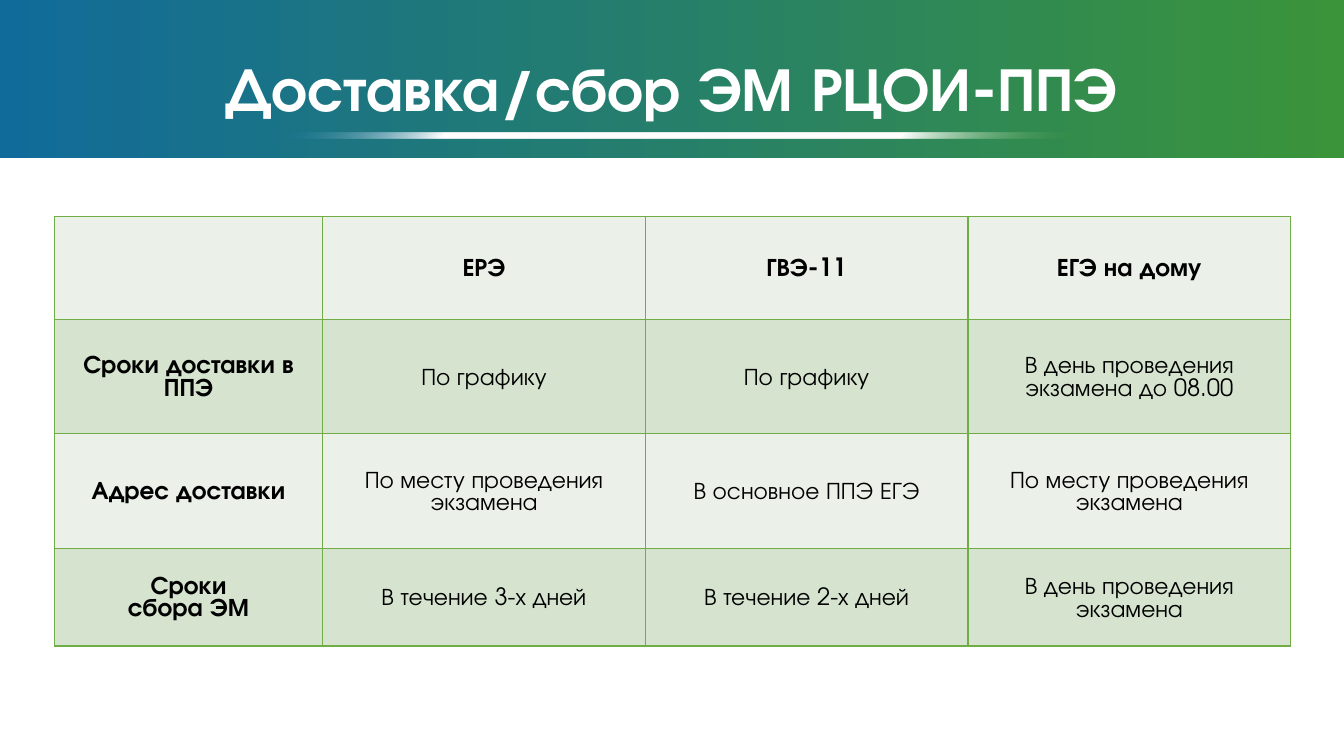
from lxml import etree
from pptx import Presentation
from pptx.dml.color import RGBColor
from pptx.enum import shapes, text
from pptx.oxml.ns import qn
from pptx.util import Inches, Pt

FACE = "TeX Gyre Adventor"
WHITE, BLACK, EDGE = "FFFFFF", "000000", "70AD47"
BANDS = ("EBF1E9", "D5E3CF")
WIDTHS = (2.66, 3.2, 3.2, 3.2)
HEIGHTS = (1.02, 1.13, 1.14, 0.97)
ROWS = (
    ("", "ЕРЭ", "ГВЭ-11", "ЕГЭ на дому"),
    ("Сроки доставки в ППЭ", "По графику", "По графику",
     "В день проведения экзамена до 08.00"),
    ("Адрес доставки", "По месту проведения экзамена",
     "В основное ППЭ ЕГЭ", "По месту проведения экзамена"),
    ("Сроки\nсбора ЭМ", "В течение 3-х дней", "В течение 2-х дней",
     "В день проведения экзамена"),
)


def rgb(code):
    """Turn a hex string into a colour."""
    return RGBColor.from_string(code)


def apply(item, form):
    """Set attributes from a dict of format values."""
    for name, value in form.items():
        setattr(item, name, value)


def style(par, size, bold, color):
    """Centre a paragraph and set its font."""
    par.alignment = text.PP_ALIGN.CENTER
    apply(par.font, {"name": FACE, "size": Pt(size), "bold": bold})
    par.font.color.rgb = rgb(color)


def blend(shape, stops, angle):
    """Fill a shape with gradient stops of place, colour and opacity."""
    shape.fill.gradient()
    shape.fill.gradient_angle = angle
    stack = shape.fill._fill._gradFill.find(qn("a:gsLst"))
    for old in list(stack):
        stack.remove(old)
    for place, code, alpha in stops:
        stop = etree.SubElement(stack, qn("a:gs"), pos=str(place * 1000))
        tone = etree.SubElement(stop, qn("a:srgbClr"), val=code)
        if alpha < 100:
            etree.SubElement(tone, qn("a:alpha"), val=str(alpha * 1000))


def add_title(slide, words):
    """Turn the title placeholder into the gradient header."""
    title = slide.shapes.title
    apply(title, {"left": Inches(0), "top": Inches(-0.04),
                  "width": Inches(13.33), "height": Inches(1.61)})
    blend(title, [(0, "116B9A", 100), (100, "3B943A", 100)], 0)
    frame = title.text_frame
    frame.text = words
    apply(frame, {"auto_size": text.MSO_AUTO_SIZE.NONE, "word_wrap": True,
                  "vertical_anchor": text.MSO_ANCHOR.MIDDLE,
                  "margin_top": Inches(0.24), "margin_bottom": Inches(0.05)})
    style(frame.paragraphs[0], 44, True, WHITE)


def add_glow(slide):
    """Draw the fading line under the title."""
    glow = slide.shapes.add_shape(
        shapes.MSO_SHAPE.RECTANGLE,
        Inches(2.65), Inches(1.32), Inches(8.04), Inches(0.05))
    glow.shadow.inherit = False
    glow.line.fill.background()
    blend(glow, [(1, "116B9A", 0), (22, WHITE, 100),
                 (78, WHITE, 100), (100, "3B943B", 0)], 315)


def add_edges(cell):
    """Give a cell thin borders on all sides."""
    props = cell._tc.get_or_add_tcPr()
    for side in ("lnL", "lnR", "lnT", "lnB"):
        line = etree.SubElement(props, qn("a:" + side), w=str(Pt(1)))
        fill = etree.SubElement(line, qn("a:solidFill"))
        etree.SubElement(fill, qn("a:srgbClr"), val=EDGE)


def fill_cell(cell, words, band, head):
    """Write and format one table cell."""
    add_edges(cell)
    cell.fill.solid()
    cell.fill.fore_color.rgb = rgb(band)
    apply(cell, {"vertical_anchor": text.MSO_ANCHOR.MIDDLE,
                 "margin_top": Inches(0.09), "margin_bottom": Inches(0.05)})
    cell.text_frame.text = words
    for par in cell.text_frame.paragraphs:
        par.line_spacing = Pt(16)
        style(par, 18 if head else 17, head, BLACK)


def add_grid(slide):
    """Build the delivery table."""
    table = slide.shapes.add_table(
        len(ROWS), len(WIDTHS), Inches(0.54), Inches(2.15),
        Inches(sum(WIDTHS)), Inches(sum(HEIGHTS))).table
    for col, width in zip(table.columns, WIDTHS):
        col.width = Inches(width)
    for r, (row, height) in enumerate(zip(ROWS, HEIGHTS)):
        table.rows[r].height = Inches(height)
        for c, words in enumerate(row):
            fill_cell(table.cell(r, c), words, BANDS[r % 2], r == 0 or c == 0)


def main():
    """Build and save the slide."""
    deck = Presentation()
    apply(deck, {"slide_width": Inches(13.33), "slide_height": Inches(7.5)})
    slide = deck.slides.add_slide(deck.slide_layouts[5])
    add_title(slide, "Доставка/сбор ЭМ РЦОИ-ППЭ")
    add_glow(slide)
    add_grid(slide)
    deck.save("out.pptx")


if __name__ == "__main__":
    main()
